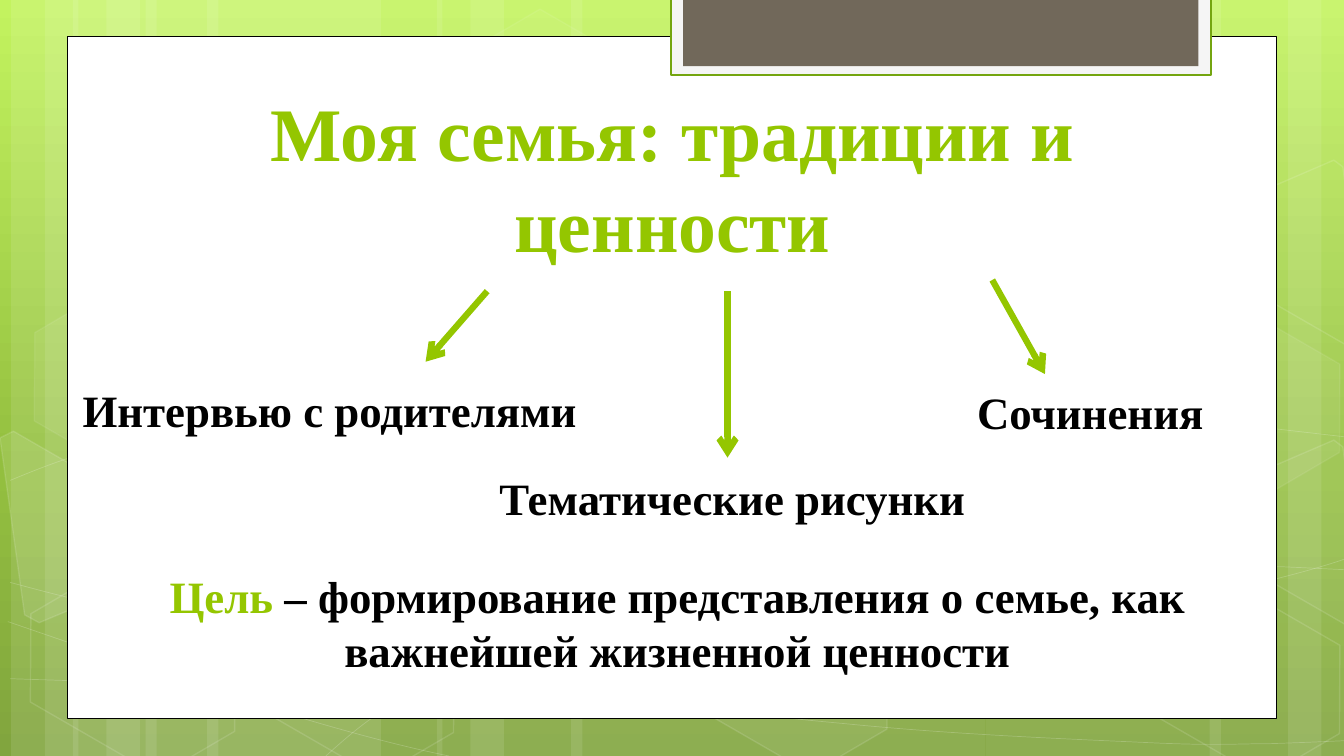
from copy import deepcopy

from lxml import etree
from pptx import Presentation
from pptx.dml.color import RGBColor
from pptx.enum.shapes import MSO_CONNECTOR, MSO_SHAPE
from pptx.enum.text import MSO_ANCHOR, MSO_AUTO_SIZE, PP_ALIGN
from pptx.oxml.ns import qn
from pptx.util import Inches, Pt

RECT, HEXAGON = MSO_SHAPE.RECTANGLE, MSO_SHAPE.HEXAGON
STRAIGHT = MSO_CONNECTOR.STRAIGHT
CENTER = PP_ALIGN.CENTER
TOP, BOTTOM = MSO_ANCHOR.TOP, MSO_ANCHOR.BOTTOM
FIT, NO_FIT = MSO_AUTO_SIZE.SHAPE_TO_FIT_TEXT, MSO_AUTO_SIZE.NONE

WHITE = RGBColor(0xFF, 0xFF, 0xFF)
BLACK = RGBColor(0x00, 0x00, 0x00)
GREEN = RGBColor(0x94, 0xC6, 0x00)
DARK_GREEN = RGBColor(0x74, 0xA5, 0x10)
PALE = RGBColor(0xF5, 0xF5, 0xF5)
BROWN = RGBColor(0x71, 0x68, 0x5A)
SKY = [(0, RGBColor(0xC3, 0xF3, 0x5F)),
       (0.62, RGBColor(0x93, 0xBF, 0x3F)),
       (1, RGBColor(0x81, 0xA5, 0x3E))]
FONT = "Times New Roman"

# Square grid: 120 columns by 67.5 rows
COLS, ROWS = 120, 67.5
CELL = Inches(40 / 3) / COLS

# Vertical bars: left column, width in columns
BARS = [(13, 21), (1, 6), (4, 10), (18.5, 21), (6.5, 6), (9.5, 10), (88, 21),
        (115, 6), (108, 10), (51, 37), (39, 6), (42, 10)]

# Waves: a start point, then Bezier segments (two controls and an end) or lines
WAVES = [
    [(0.9, 60.6), (7.4, 60.8, 13.9, 61.1, 22.9, 61),
     (31.9, 60.9, 42.9, 60.8, 54.9, 59.9), (67, 59, 84, 57.2, 95, 55.5),
     (105.9, 53.8, 117.2, 51.1, 120.9, 49.6)],
    [(0.9, 42.9), (4.3, 41.5, 7.7, 40.1, 14.6, 38.8),
     (21.4, 37.4, 31.1, 35.5, 41.7, 34.8), (52.4, 34.2, 65.3, 34.1, 78.5, 34.8),
     (91.6, 35.6, 113.7, 38.3, 120.9, 39.1)],
    [(0.7, 55.5), (15.2, 60.5, 29.7, 65.4, 40.1, 67.5)],
    [(0.9, 52), (4.6, 53, 8.4, 54, 15.4, 55.4),
     (22.3, 56.9, 32.8, 59, 42.8, 60.6), (52.7, 62.1, 65.4, 63.7, 75.3, 64.6),
     (85.2, 65.6, 95.9, 66, 102.3, 66.3), (108.6, 66.6, 110.3, 66.4, 113.4, 66.4),
     (116.5, 66.3, 118.6, 66.2, 120.9, 66.1)],
    [(29.1, 67.5), (31.2, 65.6, 33.3, 63.8, 36.3, 62.2),
     (39.2, 60.6, 43.2, 58.8, 46.5, 57.5), (49.9, 56.3, 51.9, 55.7, 56.3, 54.8),
     (60.8, 53.9, 68.8, 52.7, 73, 52), (77.2, 51.4, 77.9, 51.5, 81.5, 51.2),
     (85.3, 50.9, 91.2, 50.8, 95.3, 50.6), (99.5, 50.5, 106.4, 50.6, 106.4, 50.6),
     (114.3, 50.6), (116.6, 50.7, 118.5, 50.8, 119.6, 50.85),
     (120.7, 50.9, 120.3, 50.9, 120.7, 50.9)],
]

# Hexagons: left, top, fill opacity, line opacity
HEXAGONS = [(40, 3.2, 4, 8), (59.6, 53, 6, 12), (1.35, 53.2, None, 12),
            (1.7, 28.1, 7, 8), (20.9, 53.3, None, 12), (100, 53.4, None, 12),
            (100, 28.3, 7, 8)]
LEFT_EDGE = [(0, 39.1), (1.2, 38.5), (10.4, 43.8), (11.4, 52.3), (3.5, 55.6),
             (2.2, 54.9)]
RIGHT_EDGE = [(111.2, 42.7), (119.1, 39.3), (119.9, 39.9), (122.1, 56.3),
              (121.4, 56.5), (112.2, 51.2)]
EDGE_SHIFT = 25

LABELS = [("Интервью с родителями", (6.25, 33.75, 46.4, 5.8)),
          ("Тематические рисунки", (43.5, 41.6, 43.8, 5.8)),
          ("Сочинения", (86.25, 33.9, 22.2, 5.8))]
ARROWS = [(43.5, 26, 38, 32.3), (64.96, 26, 64.96, 40.86), (88.6, 25, 93.3, 33.4)]


def cells(*values):
    return [round(v * CELL) for v in values]


def set_alpha(solid_fill, percent):
    color = solid_fill.find(qn("a:srgbClr"))
    etree.SubElement(color, qn("a:alpha")).set("val", str(percent * 1000))


def paint(shape, fill=None, fill_alpha=None, line=None, width=1, line_alpha=None):
    shape.shadow.inherit = False
    sp_pr = shape.element.spPr
    if fill is None:
        shape.fill.background()
    else:
        shape.fill.solid()
        shape.fill.fore_color.rgb = fill
        if fill_alpha:
            set_alpha(sp_pr.find(qn("a:solidFill")), fill_alpha)
    if line is None:
        shape.line.fill.background()
    else:
        shape.line.color.rgb = line
        shape.line.width = Pt(width)
        if line_alpha:
            set_alpha(sp_pr.find(qn("a:ln")).find(qn("a:solidFill")), line_alpha)


def add_box(s, kind, box, **look):
    shape = s.shapes.add_shape(kind, *cells(*box))
    paint(shape, **look)
    return shape


def add_outline(s, points, close, **look):
    start, *rest = [cells(*point) for point in points]
    builder = s.shapes.build_freeform(*start)
    builder.add_line_segments(rest, close=close)
    shape = builder.convert_to_shape()
    paint(shape, line=WHITE, **look)
    return shape


def add_wave(s, wave):
    shape = add_outline(s, [segment[-2:] for segment in wave], False,
                        width=0.5, line_alpha=20)
    # Bend the straight segments that have control points
    for step, segment in zip(list(shape.element.iter(qn("a:lnTo"))), wave[1:]):
        if len(segment) == 2:
            continue
        curve = etree.Element(qn("a:cubicBezTo"))
        values = cells(*segment)
        for x, y in zip(values[::2], values[1::2]):
            pt = etree.SubElement(curve, qn("a:pt"))
            pt.set("x", str(x - shape.left))
            pt.set("y", str(y - shape.top))
        step.getparent().replace(step, curve)


def add_text(s, runs, box, size=32, wrap=True, anchor=TOP, fit=FIT, inset=0.05):
    tf = s.shapes.add_textbox(*cells(*box)).text_frame
    tf.word_wrap, tf.auto_size, tf.vertical_anchor = wrap, fit, anchor
    tf.margin_left = tf.margin_right = Inches(2 * inset)
    tf.margin_top = tf.margin_bottom = Inches(inset)
    p = tf.paragraphs[0]
    p.alignment = CENTER
    for text, color in runs:
        r = p.add_run()
        r.text = text
        r.font.name, r.font.size, r.font.bold = FONT, Pt(size), True
        r.font.color.rgb = color


def add_arrow(s, ends):
    arrow = s.shapes.add_connector(STRAIGHT, *cells(*ends))
    arrow.line.color.rgb = GREEN
    arrow.line.width = Pt(4.5)
    sp_pr = arrow.element.spPr
    etree.SubElement(sp_pr.find(qn("a:ln")), qn("a:tailEnd")).set("type", "arrow")
    etree.SubElement(sp_pr, qn("a:effectLst"))


def add_background(s):
    fill = s.background.fill
    fill.gradient()
    fill.gradient_angle = 270
    stops = next(s.element.iter(qn("a:gsLst")))
    stops.append(deepcopy(stops[-1]))
    for stop, (position, color) in zip(fill.gradient_stops, SKY):
        stop.position, stop.color.rgb = position, color


def add_decoration(s):
    for left, width in BARS:
        add_box(s, RECT, (left, 0, width, ROWS), fill=WHITE, fill_alpha=10)
    for wave in WAVES:
        add_wave(s, wave)
    for left, top, fill_alpha, line_alpha in HEXAGONS:
        hexagon = add_box(s, HEXAGON, (left, top, 21, 13.7),
                          fill=WHITE if fill_alpha else None, fill_alpha=fill_alpha,
                          line=WHITE, line_alpha=line_alpha)
        hexagon.rotation = 30
        hexagon.adjustments[0], hexagon.adjustments[1] = 0.285, 1.155
    # Hexagons cut by the slide's edges
    add_outline(s, LEFT_EDGE, True, fill=WHITE, fill_alpha=10, line_alpha=12)
    add_outline(s, RIGHT_EDGE, True, fill=WHITE, fill_alpha=4, line_alpha=12)
    upper = [(x, y - EDGE_SHIFT) for x, y in RIGHT_EDGE]
    add_outline(s, upper, True, line_alpha=12)


def main():
    prs = Presentation()
    prs.slide_width, prs.slide_height = cells(COLS, ROWS)
    s = prs.slides.add_slide(prs.slide_layouts[6])
    add_background(s)
    add_decoration(s)

    # White panel and the tab at its top
    add_box(s, RECT, (6, 3.25, 108, 60.9), fill=WHITE, line=BLACK, width=0.5)
    add_box(s, RECT, (59.9, -0.2, 48.2, 6.88), fill=PALE, line=DARK_GREEN, width=1.25)
    add_box(s, RECT, (61, -0.2, 46, 6.1), fill=BROWN)

    # Title, three branches and the goal
    add_text(s, [("Моя семья: традиции и ценности", GREEN)], (13.95, 13.2, 92.2, 11.25),
             size=54, anchor=BOTTOM, fit=NO_FIT, inset=0.06)
    for text, box in LABELS:
        add_text(s, [(text, BLACK)], box, wrap=False)
    for ends in ARROWS:
        add_arrow(s, ends)
    add_text(s, [("Цель", GREEN),
                 (" – формирование представления о семье, как важнейшей жизненной ценности",
                  BLACK)], (6.7, 50.35, 107.6, 10.6))
    prs.save("out.pptx")


if __name__ == "__main__":
    main()
